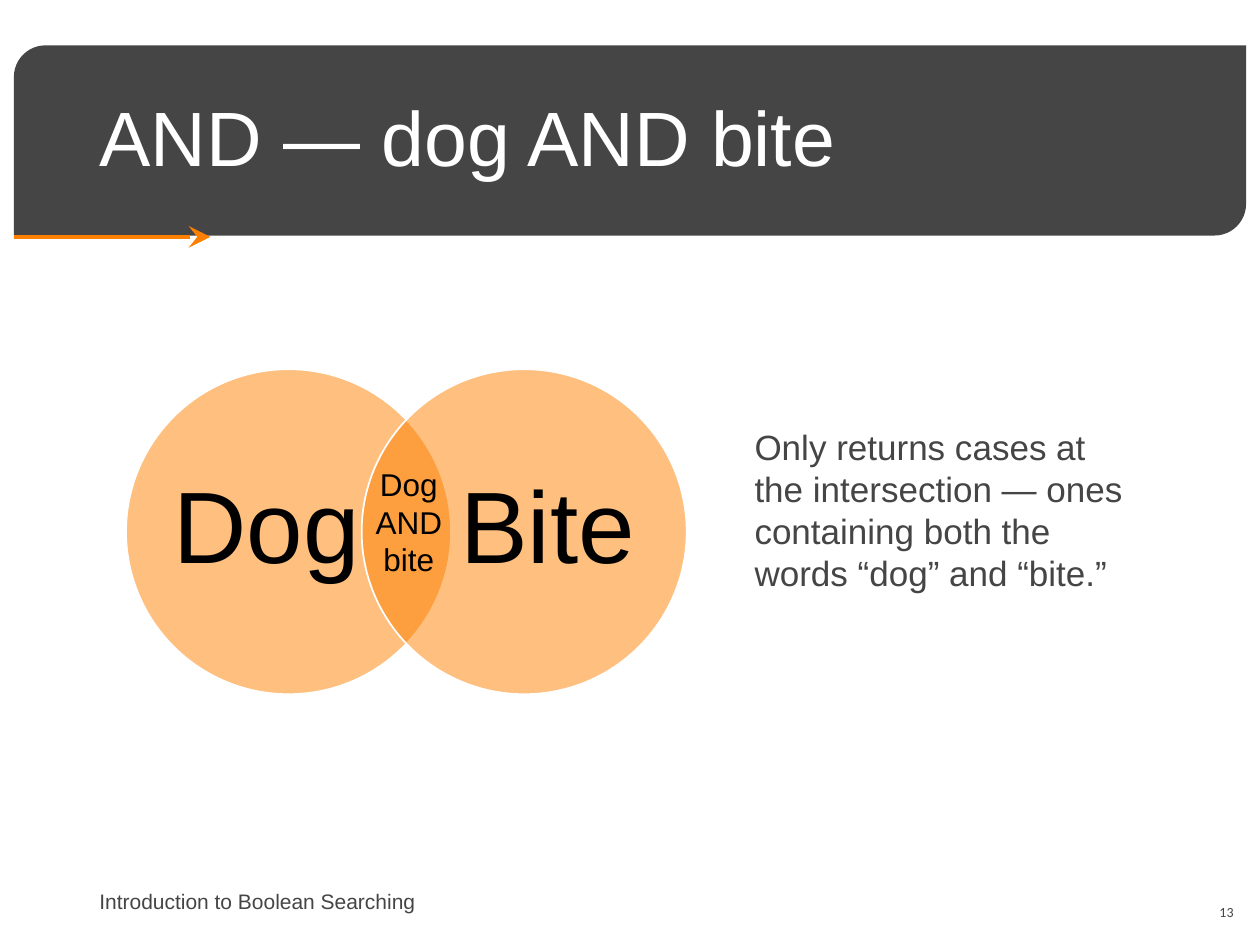
from lxml.etree import SubElement
from pptx import Presentation
from pptx.dml.color import RGBColor
from pptx.enum.shapes import MSO_CONNECTOR, MSO_SHAPE
from pptx.enum.text import MSO_ANCHOR, MSO_AUTO_SIZE, PP_ALIGN
from pptx.oxml.ns import qn
from pptx.util import Inches, Pt

COLORS = {"gray": "454545", "orange": "FE8000", "white": "FFFFFF", "black": "000000"}


def color(name):
    """Return the named palette colour."""
    return RGBColor.from_string(COLORS[name])


def write_text(frame, text, size=18, fill="gray", font="Arial", align=PP_ALIGN.LEFT,
               anchor=MSO_ANCHOR.TOP, spacing=None, margins=None, grow=False):
    """Write one formatted paragraph into a text frame."""
    frame.word_wrap = True
    frame.auto_size = MSO_AUTO_SIZE.SHAPE_TO_FIT_TEXT if grow else MSO_AUTO_SIZE.NONE
    frame.vertical_anchor = anchor
    if margins is not None:
        frame.margin_left = frame.margin_right = Inches(margins)
        frame.margin_top = frame.margin_bottom = Inches(margins)
    paragraph = frame.paragraphs[0]
    paragraph.alignment = align
    if spacing:
        paragraph.line_spacing = spacing
    run = paragraph.add_run()
    run.text = text
    run.font.size = Pt(size)
    run.font.name = font
    run.font.color.rgb = color(fill)


class SlideBuilder:
    """Hold the current slide and draw its elements in one style."""

    def __init__(self, presentation):
        """Add a title-only slide."""
        self.slide = presentation.slides.add_slide(presentation.slide_layouts[5])
        self.shapes = self.slide.shapes

    def title(self, text, left, top, width, height):
        """Place the title in front of everything drawn so far."""
        title = self.shapes.title
        title.left, title.top = Inches(left), Inches(top)
        title.width, title.height = Inches(width), Inches(height)
        write_text(title.text_frame, text, size=44, fill="white",
                   anchor=MSO_ANCHOR.MIDDLE, spacing=0.9)
        self.shapes[-1].element.addnext(title.element)

    def shape(self, kind, left, top, width, height, fill, line=None, alpha=None):
        """Draw a filled preset shape."""
        shape = self.shapes.add_shape(kind, Inches(left), Inches(top),
                                      Inches(width), Inches(height))
        shape.shadow.inherit = False
        shape.fill.solid()
        shape.fill.fore_color.rgb = color(fill)
        if alpha is not None:
            value = next(shape.element.spPr.iter(qn("a:srgbClr")))
            SubElement(value, qn("a:alpha"), val=str(alpha * 1000))
        if line:
            shape.line.color.rgb = color(line)
            shape.line.width = Pt(1)
        else:
            shape.line.fill.background()
        return shape

    def arrow(self, start, end, line, width):
        """Draw a straight line with a large stealth arrowhead."""
        connector = self.shapes.add_connector(
            MSO_CONNECTOR.STRAIGHT, *(Inches(value) for value in (*start, *end)))
        connector.line.color.rgb = color(line)
        connector.line.width = Pt(width)
        properties = connector.element.spPr
        SubElement(properties.find(qn("a:ln")), qn("a:tailEnd"),
                   type="stealth", w="lg", len="lg")
        SubElement(properties, qn("a:effectLst"))

    def text(self, text, left, top, width, height, **style):
        """Add a text box."""
        box = self.shapes.add_textbox(Inches(left), Inches(top),
                                      Inches(width), Inches(height))
        write_text(box.text_frame, text, **style)


def main():
    """Build and save the slide."""
    presentation = Presentation()
    presentation.slide_width, presentation.slide_height = Inches(10), Inches(7.5)
    builder = SlideBuilder(presentation)

    builder.shape(MSO_SHAPE.ROUND_2_DIAG_RECTANGLE, 0.11, 0.36, 9.78, 1.51, "gray")
    builder.arrow((0.11, 1.88), (1.67, 1.88), "orange", 2.5)
    builder.title("AND — dog AND bite", 0.69, 0.4, 8.62, 1.45)

    for word, circle_left, label_left in (("Dog", 1, 1.37), ("Bite", 2.87, 3.6)):
        builder.shape(MSO_SHAPE.OVAL, circle_left, 2.93, 2.58, 2.58, "orange",
                      line="white", alpha=50)
        builder.text(word, label_left, 3.23, 1.49, 1.97, size=58, fill="black",
                     align=PP_ALIGN.CENTER, anchor=MSO_ANCHOR.MIDDLE,
                     spacing=0.9, margins=0)

    builder.text("Only returns cases at the intersection — ones containing both "
                 "the words “dog” and “bite.”", 5.89, 3.33, 3.2, 1.11, size=20, grow=True)
    builder.text("Dog AND bite", 2.83, 3.64, 0.83, 1.01, fill="black",
                 align=PP_ALIGN.CENTER, grow=True)
    builder.text("13", 7.64, 7.04, 2.25, 0.4, size=8, font="Calibri",
                 align=PP_ALIGN.RIGHT, anchor=MSO_ANCHOR.MIDDLE)
    builder.text("Introduction to Boolean Searching", 0.69, 6.95, 3.31, 0.4, size=12,
                 anchor=MSO_ANCHOR.MIDDLE)
    presentation.save("out.pptx")


if __name__ == "__main__":
    main()
